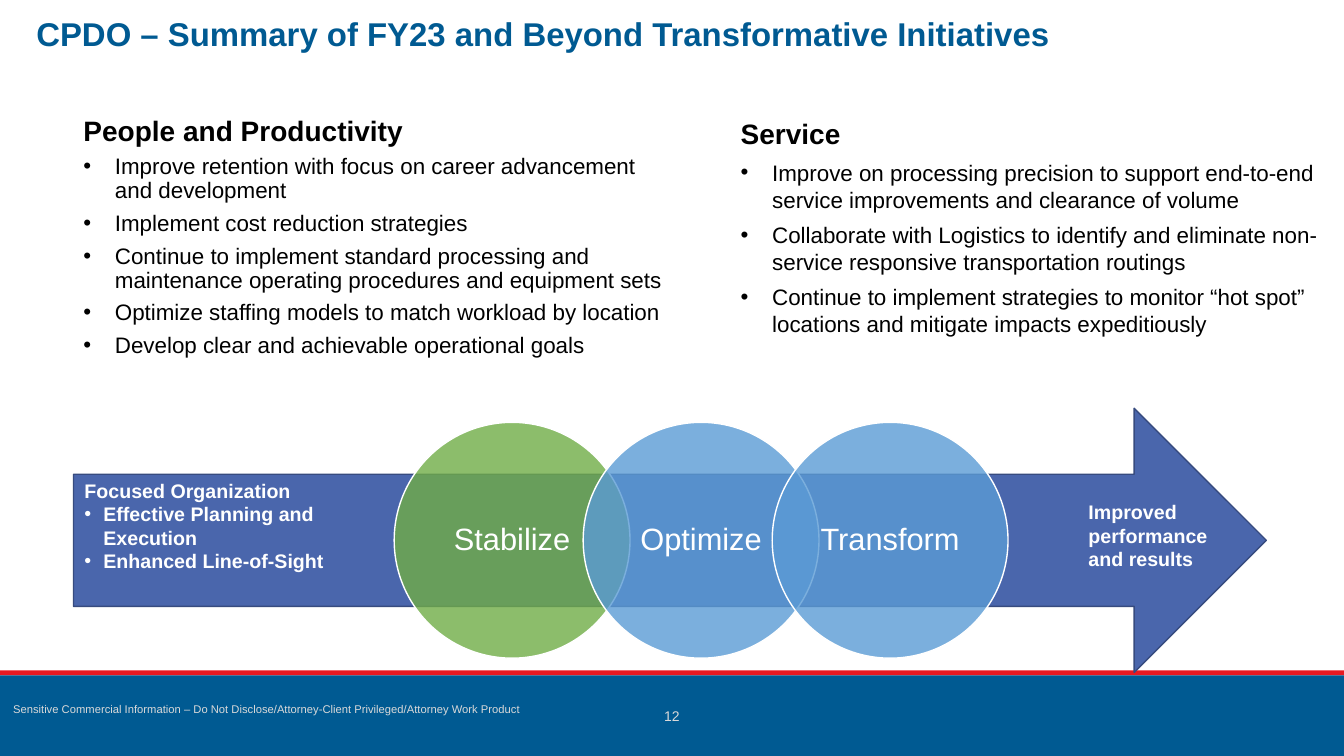
import pptx
import pptx.util
import pptx.dml.color
import pptx.enum.shapes
import pptx.enum.text
from dataclasses import dataclass
from lxml import etree

SHAPE = pptx.enum.shapes.MSO_SHAPE
ALIGN = pptx.enum.text.PP_ALIGN
ANCHOR = pptx.enum.text.MSO_ANCHOR
NS = "{http://schemas.openxmlformats.org/drawingml/2006/main}"


@dataclass(frozen=True)
class Theme:
    font: str = "Arial"
    navy: str = "005A92"
    red: str = "E71921"
    arrow: str = "4A66AC"
    edge: str = "374B7F"
    green: str = "70AD47"
    sky: str = "5B9BD5"
    white: str = "FFFFFF"
    black: str = "000000"
    pale: str = "D9D9D9"
    title: float = 23.5
    stage: float = 22
    head: float = 20
    body: float = 16
    label: float = 14
    page: float = 10
    foot: float = 8


class Deck:
    """Places elements on a grid of 64 columns by 36 rows."""

    def __init__(self, theme):
        self.theme = theme
        self.file = pptx.Presentation()
        self.file.slide_width = pptx.util.Inches(13.33)
        self.file.slide_height = pptx.util.Inches(7.5)
        self.slide = self.file.slides.add_slide(self.file.slide_layouts[5])

    def col(self, n):
        return round(self.file.slide_width * n / 64)

    def row(self, n):
        return round(self.file.slide_height * n / 36)

    def box(self, x, y, w, h):
        return self.col(x), self.row(y), self.col(w), self.row(h)

    def style(self, para, size, color, bold=False, align=ALIGN.LEFT, line=1, after=0):
        para.alignment = align
        para.line_spacing = line
        para.space_before = pptx.util.Pt(0)
        para.space_after = pptx.util.Pt(after)
        for run in para.runs:
            run.font.name = self.theme.font
            run.font.size = pptx.util.Pt(size)
            run.font.bold = bold
            run.font.color.rgb = pptx.dml.color.RGBColor.from_string(color)

    def bullet(self, para, indent):
        props = para._p.get_or_add_pPr()
        props.set("marL", str(self.col(indent)))
        props.set("indent", str(-self.col(indent)))
        etree.SubElement(props, NS + "buFont", typeface=self.theme.font)
        etree.SubElement(props, NS + "buChar", char="•")

    def title(self, text, *area):
        shape = self.slide.shapes.title
        shape.left, shape.top, shape.width, shape.height = self.box(*area)
        frame = shape.text_frame
        frame.text = text
        frame.auto_size = pptx.enum.text.MSO_AUTO_SIZE.NONE
        frame.vertical_anchor = ANCHOR.TOP
        self.style(frame.paragraphs[0], self.theme.title, self.theme.navy, True, line=0.9)

    def text(self, words, area, size, color, anchor=ANCHOR.TOP, **look):
        frame = self.slide.shapes.add_textbox(*self.box(*area)).text_frame
        frame.word_wrap = True
        frame.vertical_anchor = anchor
        frame.text = words
        self.style(frame.paragraphs[0], size, color, **look)
        return frame

    def listing(self, head, items, area, sizes, color, indent, bold=False, **look):
        frame = self.text(head, area, sizes[0], color, bold=True, **look)
        for item in items:
            para = frame.add_paragraph()
            para.text = item
            self.bullet(para, indent)
            self.style(para, sizes[1], color, bold, **look)

    def shape(self, kind, area, fill, edge=None, alpha=None):
        shape = self.slide.shapes.add_shape(kind, *self.box(*area))
        shape.shadow.inherit = False
        shape.fill.solid()
        shape.fill.fore_color.rgb = pptx.dml.color.RGBColor.from_string(fill)
        if alpha:
            color = shape._element.spPr.find(f"{NS}solidFill/{NS}srgbClr")
            etree.SubElement(color, NS + "alpha", val=str(alpha * 1000))
        if edge:
            shape.line.color.rgb = pptx.dml.color.RGBColor.from_string(edge)
            shape.line.width = pptx.util.Pt(1)
        else:
            shape.line.fill.background()
        return shape

    def stage(self, name, area, fill):
        shape = self.shape(SHAPE.OVAL, area, fill, self.theme.white, 80)
        frame = shape.text_frame
        frame.margin_left = frame.margin_right = self.col(0.4)
        frame.vertical_anchor = ANCHOR.MIDDLE
        frame.text = name
        self.style(frame.paragraphs[0], self.theme.stage, self.theme.white,
                   align=ALIGN.CENTER, line=0.9)


def main():
    look = Theme()
    deck = Deck(look)

    # Footer band
    deck.shape(SHAPE.RECTANGLE, (0, 31.92, 64, 0.24), look.red)
    deck.shape(SHAPE.RECTANGLE, (0, 32.16, 64, 3.84), look.navy)
    deck.text("Sensitive Commercial Information – Do Not Disclose/"
              "Attorney-Client Privileged/Attorney Work Product",
              (0.15, 33.02, 28.9, 1.25), look.foot, look.pale, line=1.3)
    deck.text("12", (24.8, 33.12, 14.4, 1.92), look.page, look.pale,
              ANCHOR.MIDDLE, align=ALIGN.CENTER)

    # Title
    deck.title("CPDO – Summary of FY23 and Beyond Transformative Initiatives",
               1.25, 0.62, 61.25, 2.5)

    # Initiative lists
    sizes = look.head, look.body
    deck.listing("People and Productivity", [
        "Improve retention with focus on career advancement and development",
        "Implement cost reduction strategies",
        "Continue to implement standard processing and maintenance "
        "operating procedures and equipment sets",
        "Optimize staffing models to match workload by location",
        "Develop clear and achievable operational goals",
    ], (3.5, 5.33, 28.9, 14.83), sizes, look.black, 1.5, line=0.9, after=6)
    deck.listing("Service", [
        "Improve on processing precision to support end-to-end "
        "service improvements and clearance of volume",
        "Collaborate with Logistics to identify and eliminate "
        "non-service responsive transportation routings",
        "Continue to implement strategies to monitor “hot spot” "
        "locations and mitigate impacts expeditiously",
    ], (34.8, 5.33, 28.46, 11.09), sizes, look.black, 1.5, after=6)

    # Arrow with its three stages
    deck.shape(SHAPE.RIGHT_ARROW, (3.5, 19.44, 56.8, 12.58), look.arrow, look.edge)
    stages = [("Stabilize", look.green), ("Optimize", look.sky), ("Transform", look.sky)]
    for i, (name, fill) in enumerate(stages):
        deck.stage(name, (18.77 + 9 * i, 20.11, 11.23, 11.23), fill)

    # Arrow labels
    deck.text("Improved performance and results", (51.36, 23.57, 7.39, 4.99),
              look.label, look.white, bold=True)
    deck.listing("Focused Organization",
                 ["Effective Planning and Execution", "Enhanced Line-of-Sight"],
                 (3.55, 22.56, 13.58, 6.14), (look.label, look.label),
                 look.white, 0.9, bold=True)

    deck.file.save("out.pptx")


if __name__ == "__main__":
    main()
